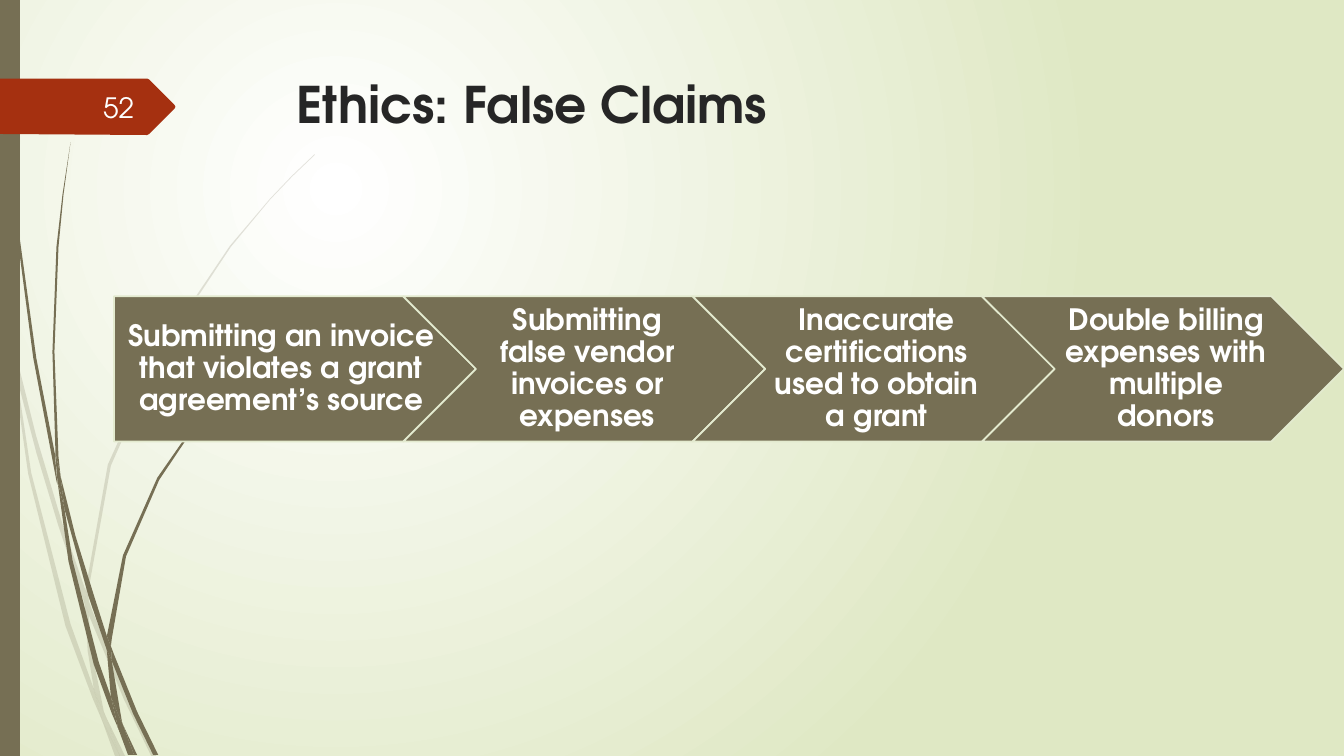
import pptx
import pptx.dml.color
import pptx.enum.shapes
import pptx.enum.text
import pptx.oxml
import pptx.oxml.ns
import pptx.util
from pptx.util import Inches

RGBColor = pptx.dml.color.RGBColor
Shape = pptx.enum.shapes.MSO_SHAPE
Align = pptx.enum.text.PP_ALIGN
Anchor = pptx.enum.text.MSO_ANCHOR
qn = pptx.oxml.ns.qn

WHITE = RGBColor(0xFF, 0xFF, 0xFF)
PALE_GREEN = RGBColor(0xDF, 0xE8, 0xC4)
EDGE_GREEN = RGBColor(0xE3, 0xEA, 0xCF)
OLIVE = RGBColor(0x76, 0x6F, 0x54)
RUST = RGBColor(0xA5, 0x30, 0x10)
CHARCOAL = RGBColor(0x26, 0x26, 0x26)
NUMBER_WHITE = RGBColor(0xFE, 0xFF, 0xFF)
FONT = "TeX Gyre Adventor"

# Outline corners of the grass blades, in inches
FADED_GRASS = [
    [(0.11, 3.5), (0.09, 3.22), (0, 2.82), (0, 2.99), (0.1, 3.44)],
    [(0.58, 5.22), (0.84, 5.99), (0.85, 5.86), (0.62, 5.2), (0.36, 4.33), (0.14, 3.45),
     (0.17, 3.76), (0.36, 4.49)],
    [(0.92, 6.07), (0.88, 5.96), (0.88, 6.1), (1.23, 6.94), (1.5, 7.5), (1.55, 7.5),
     (1.27, 6.92)],
    [(1.19, 7.5), (1.24, 7.5), (1.05, 7.11)],
    [(0.93, 6.83), (0.7, 6.19), (0.31, 4.69), (0.17, 3.76), (0.11, 3.5), (0.28, 4.7),
     (0.65, 6.21), (0.92, 6.93), (1.01, 7.14), (0.99, 7.07)],
    [(0.84, 5.99), (0.87, 6.46), (0.93, 6.83), (0.96, 6.92), (1.05, 7.11), (1.03, 7.06),
     (0.91, 6.46), (0.88, 6.1), (0.88, 6.08)],
    [(0.88, 5.84), (1.1, 4.62), (1.6, 3.49), (2.29, 2.45), (2.68, 1.98), (2.9, 1.75),
     (3.12, 1.54), (3.12, 1.53), (2.89, 1.75), (2.68, 1.97), (2.28, 2.44), (1.58, 3.48),
     (1.07, 4.61), (0.85, 5.84), (0.85, 5.86), (0.88, 5.96)],
    [(1.01, 7.14), (1.14, 7.5), (1.19, 7.5)],
    [(0.88, 6.08), (0.88, 5.96), (0.85, 5.86), (0.84, 5.99)],
    [(0.96, 6.92), (0.93, 6.83), (0.99, 7.07), (1.01, 7.14), (1.19, 7.5), (1.05, 7.11)],
]
SOLID_GRASS = [
    [(0.07, 1.1), (0.17, 2.33), (0.33, 3.55), (0.56, 4.77), (0.57, 4.81), (0.55, 4.57),
     (0.55, 4.53), (0.36, 3.55), (0.19, 2.32), (0.08, 1.09), (0.05, 0.48), (0.04, 0),
     (0.03, 0), (0.04, 0.48)],
    [(0.88, 5.92), (1.06, 6.45), (1.06, 6.31), (0.93, 5.9), (0.75, 5.32), (0.6, 4.72),
     (0.64, 5.05)],
    [(1.13, 6.49), (1.1, 6.41), (1.11, 6.56), (1.32, 7.08), (1.52, 7.49), (1.57, 7.49),
     (1.36, 7.06)],
    [(1.1, 6.91), (0.98, 6.57), (0.72, 5.56), (0.64, 5.05), (0.57, 4.77), (0.68, 5.57),
     (0.93, 6.59), (1.11, 7.08), (1.17, 7.22), (1.16, 7.17)],
    [(0.6, 4.72), (0.58, 4.53), (0.54, 3.49), (0.58, 2.45), (0.63, 1.93), (0.7, 1.41),
     (0.62, 1.93), (0.56, 2.45), (0.52, 3.49), (0.55, 4.49)],
    [(1.33, 7.49), (1.36, 7.49), (1.22, 7.19)],
    [(0.57, 4.77), (0.64, 5.05), (0.6, 4.72), (0.55, 4.49), (0.55, 4.53)],
    [(1.11, 6.33), (1.25, 5.52), (1.58, 4.76), (2.05, 4.06), (2.31, 3.74), (2.45, 3.59),
     (2.61, 3.44), (2.6, 3.44), (2.45, 3.58), (2.31, 3.73), (2.04, 4.05), (1.56, 4.74),
     (1.22, 5.51), (1.06, 6.31), (1.1, 6.41)],
    [(1.17, 7.22), (1.27, 7.49), (1.31, 7.49)],
    [(1.06, 6.45), (1.1, 6.91), (1.16, 7.06), (1.22, 7.19), (1.21, 7.16), (1.11, 6.56),
     (1.09, 6.51)],
    [(1.06, 6.45), (1.09, 6.51), (1.11, 6.56), (1.1, 6.41), (1.06, 6.31)],
    [(1.16, 7.06), (1.1, 6.91), (1.16, 7.17), (1.17, 7.22), (1.3, 7.49), (1.33, 7.49),
     (1.22, 7.19)],
]
NUMBER_TAG = [(0, 0.78), (1.46, 0.78), (1.48, 0.79), (1.73, 1.04), (1.74, 1.06),
              (1.73, 1.08), (1.48, 1.33), (1.46, 1.34), (0, 1.33)]
CLAIMS = [
    "Submitting an invoice that violates a grant agreement’s source",
    "Submitting false vendor invoices or expenses",
    "Inaccurate certifications used to obtain a grant",
    "Double billing expenses with multiple donors",
]

deck = pptx.Presentation()
deck.slide_width = Inches(13.33)
deck.slide_height = Inches(7.5)
page = deck.slides.add_slide(deck.slide_layouts[6])


def add_outline(corners, color):
    points = [(Inches(x), Inches(y)) for x, y in corners]
    builder = page.shapes.build_freeform(*points[0])
    builder.add_line_segments(points[1:], close=True)
    outline = builder.convert_to_shape()
    outline.shadow.inherit = False
    outline.fill.solid()
    outline.fill.fore_color.rgb = color
    outline.line.fill.background()
    return outline


def write(box, text, size, color, bold=True, align=Align.LEFT, anchor=Anchor.TOP, spacing=1.0):
    frame = box.text_frame
    frame.word_wrap = True
    frame.vertical_anchor = anchor
    para = frame.paragraphs[0]
    para.alignment = align
    para.line_spacing = spacing
    span = para.add_run()
    span.text = text
    span.font.name = FONT
    span.font.size = pptx.util.Pt(size)
    span.font.bold = bold
    span.font.color.rgb = color


# Background: white glow spreading from the upper left
backdrop = page.background.fill
backdrop.gradient()
for stop, color, position in zip(backdrop.gradient_stops, (WHITE, PALE_GREEN), (0, 1)):
    stop.color.rgb = color
    stop.position = position
gradient = page.element.find(".//" + qn("a:gradFill"))
gradient.remove(gradient.find(qn("a:lin")))
gradient.append(pptx.oxml.parse_xml(
    f'<a:path {pptx.oxml.ns.nsdecls("a")} path="circle">'
    '<a:fillToRect l="50000" t="50000" r="100000" b="100000"/></a:path>'))

# Grass, side bar and number tag
for blade in FADED_GRASS:
    faded = add_outline(blade, OLIVE)
    tint = faded.element.spPr.find(qn("a:solidFill"))[0]
    tint.append(pptx.oxml.parse_xml(f'<a:alpha {pptx.oxml.ns.nsdecls("a")} val="20000"/>'))
for blade in SOLID_GRASS:
    add_outline(blade, OLIVE)
add_outline([(0, 0), (0.2, 0), (0.2, 7.5), (0, 7.5)], OLIVE)
add_outline(NUMBER_TAG, RUST)

# Chain of false claims
for index, claim in enumerate(CLAIMS):
    kind = Shape.CHEVRON if index else Shape.PENTAGON
    arrow = page.shapes.add_shape(
        kind, Inches(1.13 + 2.87 * index), Inches(2.94), Inches(3.59), Inches(1.44))
    arrow.shadow.inherit = False
    arrow.fill.solid()
    arrow.fill.fore_color.rgb = OLIVE
    arrow.line.color.rgb = EDGE_GREEN
    arrow.line.width = pptx.util.Pt(1.25)
    frame = arrow.text_frame
    frame.margin_left = Inches(0.09 if index else 0.12)
    frame.margin_right = Inches(0.03)
    frame.margin_top = frame.margin_bottom = Inches(0.06)
    write(arrow, claim, 21, WHITE, align=Align.CENTER, anchor=Anchor.MIDDLE, spacing=0.9)

title = page.shapes.add_textbox(Inches(2.84), Inches(0.68), Inches(9.75), Inches(1.4))
write(title, "Ethics: False Claims", 36, CHARCOAL)
number = page.shapes.add_textbox(Inches(0.58), Inches(0.86), Inches(0.85), Inches(0.4))
write(number, "52", 20, NUMBER_WHITE, bold=False, align=Align.RIGHT, anchor=Anchor.MIDDLE)

deck.save("out.pptx")
